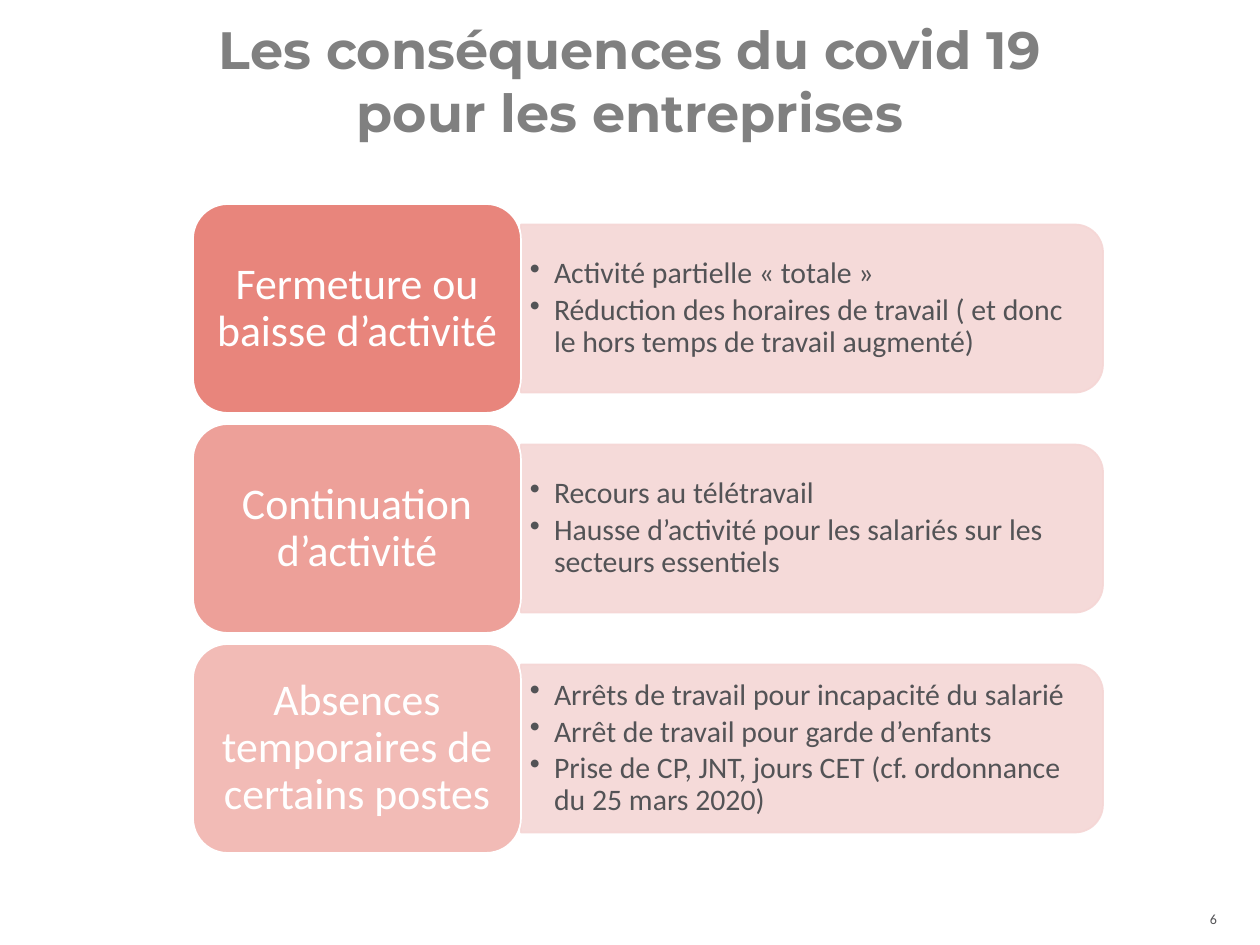
from lxml import etree
from pptx import Presentation
from pptx.dml.color import RGBColor
from pptx.enum.shapes import MSO_SHAPE
from pptx.enum.text import MSO_ANCHOR, PP_ALIGN
from pptx.oxml.ns import qn
from pptx.util import Pt

LEFT, CENTER, RIGHT = PP_ALIGN.LEFT, PP_ALIGN.CENTER, PP_ALIGN.RIGHT
TOP, MIDDLE = MSO_ANCHOR.TOP, MSO_ANCHOR.MIDDLE
ROUND, TAB = MSO_SHAPE.ROUNDED_RECTANGLE, MSO_SHAPE.ROUND_2_SAME_RECTANGLE

CORAL = RGBColor(0xE6, 0x78, 0x6E)
PINK = RGBColor(0xF5, 0xD6, 0xD5)
WHITE = RGBColor(0xFF, 0xFF, 0xFF)
GREY = RGBColor(0x80, 0x80, 0x80)
DARK = RGBColor(0x53, 0x53, 0x56)

TITLE = ["Les conséquences du covid 19", "pour les entreprises"]
PAGE = ["6"]
ROWS = [  # label, opacity of the tile in percent, bullets
    ("Fermeture ou baisse d’activité", 90, [
        "Activité partielle « totale »",
        "Réduction des horaires de travail ( et donc le hors temps de travail augmenté)",
    ]),
    ("Continuation d’activité", 70, [
        "Recours au télétravail",
        "Hausse d’activité pour les salariés sur les secteurs essentiels",
    ]),
    ("Absences temporaires de certains postes", 50, [
        "Arrêts de travail pour incapacité du salarié",
        "Arrêt de travail pour garde d’enfants",
        "Prise de CP, JNT, jours CET (cf. ordonnance du 25 mars 2020)",
    ]),
]

TITLE_FONT = {"name": "Montserrat", "size": Pt(30), "bold": True}
LABEL_FONT = {"name": "Calibri", "size": Pt(25)}
BULLET_FONT = {"name": "Calibri", "size": Pt(17)}
PAGE_FONT = {"name": "Calibri", "size": Pt(8)}
LABEL_GAPS = {"line_spacing": 0.9}
BULLET_GAPS = {"line_spacing": 0.9, "space_after": Pt(2.6)}

SCALE = 914400 / 126
TILE_X, TILE_Y, TILE_W, TILE_H = 193, 204, 328, 209
PITCH = 220
PANEL_W, PANEL_H = 582, 168
NOTE_W, NOTE_H = 575, 151
INDENT = 24


def px(n):
    return round(n * SCALE)


def fade(holder, percent):
    """Set the opacity of the solid fill inside a spPr or ln element."""
    node = holder.find(qn("a:solidFill")).find(qn("a:srgbClr"))
    etree.SubElement(node, qn("a:alpha"), val=str(percent * 1000))


def write(shape, lines, font, color, align, anchor, gaps=None, pad=(13, 6)):
    frame = shape.text_frame
    frame.word_wrap = True
    frame.vertical_anchor = anchor
    frame.margin_left = frame.margin_right = px(pad[0])
    frame.margin_top = frame.margin_bottom = px(pad[1])
    for i, line in enumerate(lines):
        para = frame.paragraphs[0] if i == 0 else frame.add_paragraph()
        para.alignment = align
        for key, value in (gaps or {}).items():
            setattr(para, key, value)
        run = para.add_run()
        run.text = line
        for key, value in font.items():
            setattr(run.font, key, value)
        run.font.color.rgb = color
    return frame.paragraphs


def add_text(slide, box, *args, **kwargs):
    shape = slide.shapes.add_textbox(*map(px, box))
    return write(shape, *args, **kwargs)


def add_block(slide, kind, box, fill, line, alpha):
    shape = slide.shapes.add_shape(kind, *map(px, box))
    shape.shadow.inherit = False
    shape.fill.solid()
    shape.fill.fore_color.rgb = fill
    fade(shape.element.spPr, alpha)
    shape.line.color.rgb = line
    shape.line.width = Pt(1)
    return shape


def add_bullet(para):
    props = para._p.get_or_add_pPr()
    props.set("marL", str(px(INDENT)))
    props.set("indent", str(-px(INDENT)))
    etree.SubElement(props, qn("a:buChar"), char="•")


def add_row(slide, top, label, alpha, notes):
    mid = top + TILE_H / 2
    edge = TILE_X + TILE_W
    # The tab is upright before its quarter turn, so its sides are swapped.
    panel = add_block(slide, TAB, (edge + (PANEL_W - PANEL_H) / 2, mid - PANEL_W / 2,
                                   PANEL_H, PANEL_W), PINK, PINK, 90)
    panel.rotation = 90
    fade(panel.element.spPr.find(qn("a:ln")), 90)
    paras = add_text(slide, (edge, mid - NOTE_H / 2, NOTE_W, NOTE_H), notes,
                     BULLET_FONT, DARK, LEFT, MIDDLE, BULLET_GAPS, pad=(9, 5))
    for para in paras:
        add_bullet(para)
    tile = add_block(slide, ROUND, (TILE_X, top, TILE_W, TILE_H), CORAL, WHITE, alpha)
    write(tile, [label], LABEL_FONT, WHITE, CENTER, MIDDLE, LABEL_GAPS)


def main():
    deck = Presentation()
    deck.slide_width, deck.slide_height = px(1260), px(945)
    slide = deck.slides.add_slide(deck.slide_layouts[6])
    add_text(slide, (0, 11, 1260, 140), TITLE, TITLE_FONT, GREY, CENTER, TOP)
    add_text(slide, (1143, 906, 74, 25), PAGE, PAGE_FONT, DARK, RIGHT, MIDDLE, pad=(0, 0))
    for i, row in enumerate(ROWS):
        add_row(slide, TILE_Y + i * PITCH, *row)
    deck.save("out.pptx")


if __name__ == "__main__":
    main()
